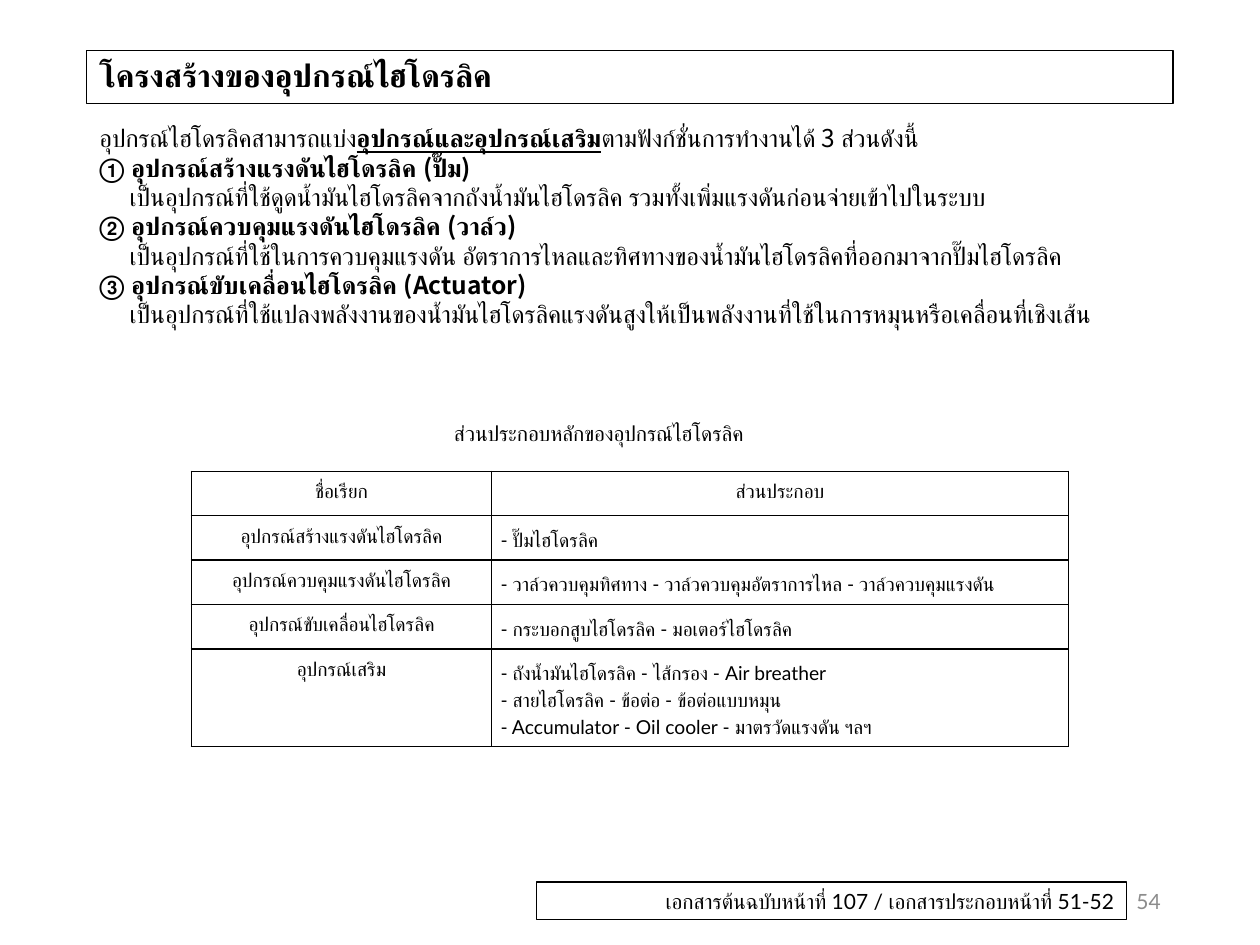
from lxml.etree import SubElement
from pptx import Presentation
from pptx.dml.color import RGBColor
from pptx.enum.shapes import MSO_SHAPE as Preset
from pptx.enum.text import MSO_ANCHOR as Anchor, MSO_AUTO_SIZE as AutoSize, PP_ALIGN as Align
from pptx.oxml import parse_xml
from pptx.oxml.ns import nsdecls, qn
from pptx.util import Cm, Pt

BLACK = "000000"
GREY = "8C8C8C"

INTRO = [
    ("อุปกรณ์ไฮโดรลิคสามารถแบ่ง", False),
    ("อุปกรณ์และอุปกรณ์เสริม", True),
    ("ตามฟังก์ชั่นการทำงานได้ 3 ส่วนดังนี้", False),
]
PARTS = [
    ("① อุปกรณ์สร้างแรงดันไฮโดรลิค (ปั๊ม)",
     "เป็นอุปกรณ์ที่ใช้ดูดน้ำมันไฮโดรลิคจากถังน้ำมันไฮโดรลิค รวมทั้งเพิ่มแรงดันก่อนจ่ายเข้าไปในระบบ"),
    ("② อุปกรณ์ควบคุมแรงดันไฮโดรลิค (วาล์ว)",
     "เป็นอุปกรณ์ที่ใช้ในการควบคุมแรงดัน อัตราการไหลและทิศทางของน้ำมันไฮโดรลิคที่ออกมาจากปั๊มไฮโดรลิค"),
    ("③ อุปกรณ์ขับเคลื่อนไฮโดรลิค (Actuator)",
     "เป็นอุปกรณ์ที่ใช้แปลงพลังงานของน้ำมันไฮโดรลิคแรงดันสูงให้เป็นพลังงานที่ใช้ในการหมุนหรือเคลื่อนที่เชิงเส้น"),
]
COMPONENTS = [
    ("ชื่อเรียก", ["ส่วนประกอบ"]),
    ("อุปกรณ์สร้างแรงดันไฮโดรลิค", ["- ปั๊มไฮโดรลิค"]),
    ("อุปกรณ์ควบคุมแรงดันไฮโดรลิค",
     ["- วาล์วควบคุมทิศทาง - วาล์วควบคุมอัตราการไหล - วาล์วควบคุมแรงดัน"]),
    ("อุปกรณ์ขับเคลื่อนไฮโดรลิค", ["- กระบอกสูบไฮโดรลิค - มอเตอร์ไฮโดรลิค"]),
    ("อุปกรณ์เสริม",
     ["- ถังน้ำมันไฮโดรลิค - ไส้กรอง - Air breather",
      "- สายไฮโดรลิค - ข้อต่อ - ข้อต่อแบบหมุน",
      "- Accumulator - Oil cooler - มาตรวัดแรงดัน ฯลฯ"]),
]


def rgb(color):
    """Turn a hex string into a colour."""
    return RGBColor.from_string(color)


def style(paragraph, size, align=Align.LEFT, color=BLACK, bold=False, face="Lato"):
    """Set the font and alignment of a paragraph."""
    font = paragraph.font
    font.name, font.size, font.bold = face, Pt(size), bold
    font.color.rgb = rgb(color)
    paragraph.alignment = align


def place(shape, box):
    """Move a shape to a left, top, width, height box in centimetres."""
    shape.left, shape.top, shape.width, shape.height = map(Cm, box)


def outline(shape):
    """Give a shape a thin black line and no fill."""
    shape.fill.background()
    shape.line.color.rgb = rgb(BLACK)
    shape.line.width = Pt(0.75)


def add_title(slide, box):
    """Fill the framed title."""
    title = slide.shapes.title
    place(title, box)
    outline(title)
    frame = title.text_frame
    frame.text = "โครงสร้างของอุปกรณ์ไฮโดรลิค"
    frame.auto_size = AutoSize.NONE
    frame.vertical_anchor = Anchor.MIDDLE
    style(frame.paragraphs[0], 18, bold=True)
    frame.paragraphs[0].line_spacing = 0.9


def format_body_line(paragraph, bold=False, indent=0):
    """Format a line of the body as unbulleted text."""
    properties = paragraph._p.get_or_add_pPr()
    properties.set("marL", str(Cm(indent)))
    properties.set("indent", "0")
    paragraph.line_spacing = Pt(16.75)
    paragraph.space_before = Pt(0)
    SubElement(properties, qn("a:buNone"))
    style(paragraph, 14, bold=bold, face="Noto Sans CJK JP")


def add_body(slide, box):
    """Fill the body with the introduction and the three parts."""
    body = slide.placeholders[1]
    place(body, box)
    frame = body.text_frame
    frame.auto_size = AutoSize.NONE
    intro = frame.paragraphs[0]
    format_body_line(intro)
    for words, stressed in INTRO:
        run = intro.add_run()
        run.text = words
        run.font.bold = run.font.underline = stressed
    for heading, description in PARTS:
        for words, bold, indent in ((heading, True, 0), (description, False, 0.61)):
            line = frame.add_paragraph()
            line.text = words
            format_body_line(line, bold, indent)


def add_label(slide, box, words, align, color=BLACK):
    """Add a one-line text box centred in its height."""
    label = slide.shapes.add_textbox(*map(Cm, box))
    frame = label.text_frame
    frame.word_wrap = True
    frame.vertical_anchor = Anchor.MIDDLE
    frame.text = words
    style(frame.paragraphs[0], 12, align, color)


def add_reference(slide, box):
    """Add the framed page reference."""
    reference = slide.shapes.add_shape(Preset.RECTANGLE, *map(Cm, box))
    reference.shadow.inherit = False
    outline(reference)
    frame = reference.text_frame
    frame.word_wrap = True
    frame.vertical_anchor = Anchor.TOP
    frame.text = "เอกสารต้นฉบับหน้าที่ 107 / เอกสารประกอบหน้าที่ 51-52"
    style(frame.paragraphs[0], 12, Align.RIGHT)


def fill_cell(cell, lines, align):
    """Write lines into a cell and draw its four borders."""
    cell.fill.background()
    cell.margin_left = cell.margin_right = cell.margin_top = cell.margin_bottom = Cm(0.18)
    cell.text = "\n".join(lines)
    for paragraph in cell.text_frame.paragraphs:
        style(paragraph, 11, align)
        paragraph.line_spacing = 1.15
    properties = cell._tc.get_or_add_tcPr()
    for position, side in enumerate("LRTB"):
        properties.insert(position, parse_xml(
            f'<a:ln{side} {nsdecls("a")} w="{Pt(1)}"><a:solidFill>'
            f'<a:srgbClr val="{BLACK}"/></a:solidFill></a:ln{side}>'))


def add_components(slide, box):
    """Add the table of components."""
    table = slide.shapes.add_table(len(COMPONENTS), 2, *map(Cm, box)).table
    table.first_row = table.horz_banding = False
    name_width = 6.05
    table.columns[0].width = Cm(name_width)
    table.columns[1].width = Cm(box[2] - name_width)
    for index, (name, contents) in enumerate(COMPONENTS):
        table.rows[index].height = Cm(0.36 + 0.53 * len(contents))
        fill_cell(table.cell(index, 0), [name], Align.CENTER)
        fill_cell(table.cell(index, 1), contents, Align.LEFT if index else Align.CENTER)


def main():
    """Build and save the slide."""
    deck = Presentation()
    deck.slide_width, deck.slide_height = Cm(25.4), Cm(19.05)
    slide = deck.slides.add_slide(deck.slide_layouts[1])
    add_title(slide, (1.75, 1.02, 21.9, 1.07))
    add_reference(slide, (10.82, 17.78, 11.89, 0.76))
    add_label(slide, (17.93, 17.65, 5.72, 1.02), "54", Align.RIGHT, GREY)
    add_body(slide, (1.75, 2.36, 21.92, 5.61))
    add_label(slide, (8.36, 8.36, 7.42, 0.76), "ส่วนประกอบหลักของอุปกรณ์ไฮโดรลิค", Align.CENTER)
    add_components(slide, (3.86, 9.5, 17.68, 5.51))
    deck.save("out.pptx")


if __name__ == "__main__":
    main()
